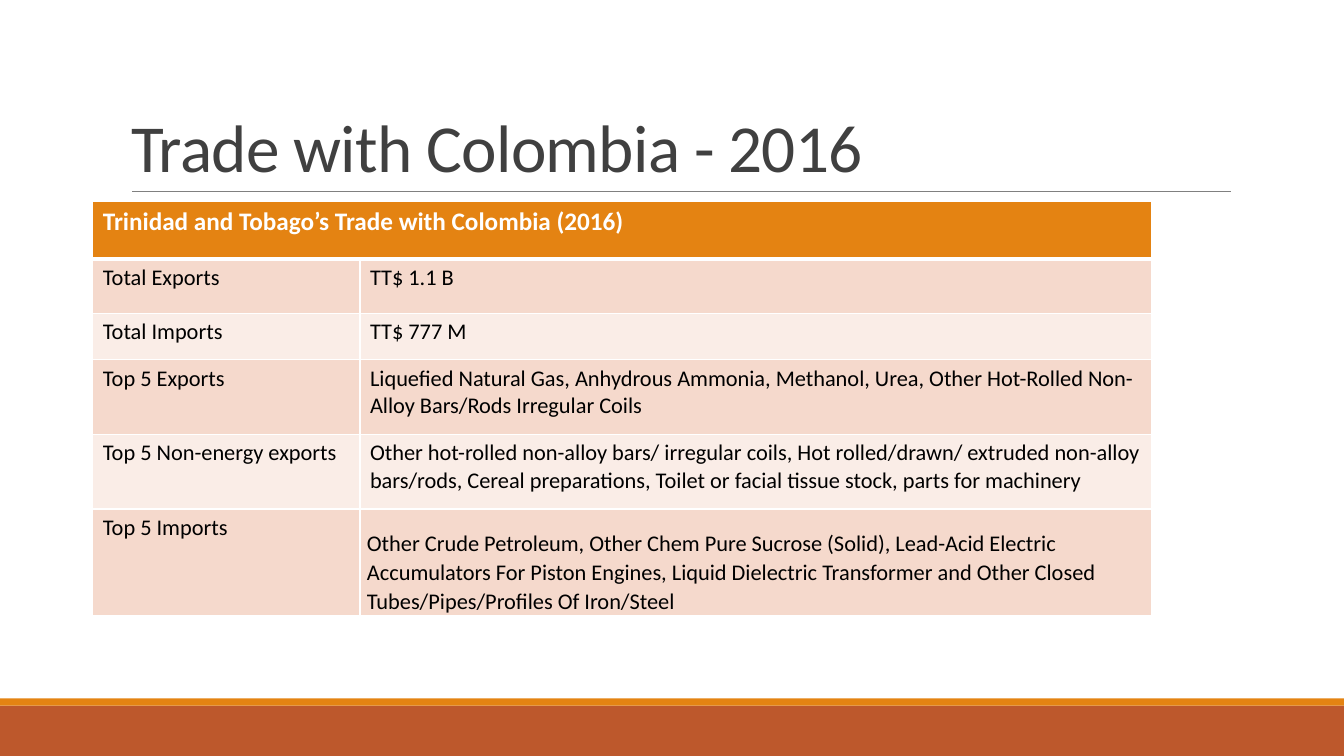
from dataclasses import dataclass

from lxml import etree
from pptx import Presentation
from pptx import util as u
from pptx.dml.color import RGBColor
from pptx.enum import shapes, text
from pptx.oxml import ns

WHITE = RGBColor(0xFF, 0xFF, 0xFF)
BLACK = RGBColor(0, 0, 0)
GRAY = RGBColor(0x80, 0x80, 0x80)
DARK = RGBColor(0x40, 0x40, 0x40)
RUST = RGBColor(0xBD, 0x58, 0x2C)
ORANGE = RGBColor(0xE4, 0x83, 0x12)
PEACH = RGBColor(0xF5, 0xD9, 0xCC)
BLUSH = RGBColor(0xFA, 0xED, 0xE7)
FONT = "Calibri"
WIDE = 13.33


@dataclass
class Band:
    top: float
    height: float
    color: RGBColor


@dataclass
class Row:
    height: float
    label: str
    value: str


BANDS = [Band(7, 0.5, RUST), Band(6.93, 0.07, ORANGE)]
COLS = [2.65, 7.85]
HEAD = Row(0.57, "Trinidad and Tobago’s Trade with Colombia (2016)", "")
ROWS = [
    Row(0.54, "Total Exports", "TT$ 1.1 B"),
    Row(0.46, "Total Imports", "TT$ 777 M"),
    Row(0.74, "Top 5 Exports",
        "Liquefied Natural Gas, Anhydrous Ammonia, Methanol, Urea, "
        "Other Hot-Rolled Non-Alloy Bars/Rods Irregular Coils"),
    Row(0.74, "Top 5 Non-energy exports",
        "Other hot-rolled non-alloy bars/ irregular coils, Hot rolled/drawn/ "
        "extruded non-alloy bars/rods, Cereal preparations, "
        "Toilet or facial tissue stock, parts for machinery"),
    Row(1.06, "Top 5 Imports",
        "Other Crude Petroleum, Other Chem Pure Sucrose (Solid), "
        "Lead-Acid Electric Accumulators For Piston Engines, Liquid Dielectric "
        "Transformer and Other Closed Tubes/Pipes/Profiles Of Iron/Steel"),
]


def draw_band(slide, band: Band) -> None:
    bar = slide.shapes.add_shape(
        shapes.MSO_SHAPE.RECTANGLE, 0, u.Inches(band.top),
        u.Inches(WIDE), u.Inches(band.height))
    bar.shadow.inherit = False
    bar.fill.solid()
    bar.fill.fore_color.rgb = band.color
    bar.line.fill.background()


def draw_rule(slide) -> None:
    rule = slide.shapes.add_connector(
        shapes.MSO_CONNECTOR.STRAIGHT, u.Inches(1.31), u.Inches(1.9),
        u.Inches(12.21), u.Inches(1.9))
    rule.line.color.rgb = GRAY
    rule.line.width = u.Pt(0.5)
    etree.SubElement(rule._element.spPr, ns.qn("a:effectLst"))


def set_title(slide) -> None:
    title = slide.shapes.title
    title.left, title.top = u.Inches(1.2), u.Inches(0.31)
    title.width, title.height = u.Inches(11), u.Inches(1.59)
    frame = title.text_frame
    frame.text = "Trade with Colombia - 2016"
    frame.vertical_anchor = text.MSO_ANCHOR.BOTTOM
    para = frame.paragraphs[0]
    para.alignment = text.PP_ALIGN.LEFT
    para.line_spacing = 0.85
    para.font.name, para.font.size = FONT, u.Pt(48)
    para.font.color.rgb = DARK
    para.runs[0].font._element.set("spc", "-50")


def set_edges(cell, top: float, base: float) -> None:
    props = cell._tc.get_or_add_tcPr()
    sides = {"lnL": 1, "lnR": 1, "lnT": top, "lnB": base}
    for spot, (side, width) in enumerate(sides.items()):
        edge = etree.Element(ns.qn(f"a:{side}"), w=str(u.Pt(width)))
        fill = etree.SubElement(edge, ns.qn("a:solidFill"))
        etree.SubElement(fill, ns.qn("a:srgbClr"), val=str(WHITE))
        props.insert(spot, edge)


def set_cell(cell, words: str, fill: RGBColor, color: RGBColor,
             size: int, bold: bool) -> None:
    cell.text = words
    cell.fill.solid()
    cell.fill.fore_color.rgb = fill
    font = cell.text_frame.paragraphs[0].font
    font.name, font.size, font.bold = FONT, u.Pt(size), bold
    font.color.rgb = color


def draw_table(slide) -> None:
    rows = [HEAD, *ROWS]
    grid = slide.shapes.add_table(
        len(rows), len(COLS), u.Inches(0.92), u.Inches(2),
        u.Inches(sum(COLS)), u.Inches(sum(row.height for row in rows))).table
    for col, width in zip(grid.columns, COLS):
        col.width = u.Inches(width)
    for num, row in enumerate(rows):
        grid.rows[num].height = u.Inches(row.height)
        for cell, words in zip(grid.rows[num].cells, (row.label, row.value)):
            if num == 0:
                set_cell(cell, words, ORANGE, WHITE, 18, True)
            else:
                fill = PEACH if num % 2 else BLUSH
                set_cell(cell, words, fill, BLACK, 16, False)
            set_edges(cell, 3 if num == 1 else 1, 3 if num == 0 else 1)
    grid.cell(0, 0).merge(grid.cell(0, 1))

    last = grid.cell(len(ROWS), 1)
    last.vertical_anchor = text.MSO_ANCHOR.BOTTOM
    last.margin_left = last.margin_right = u.Inches(0.07)
    last.margin_top = last.margin_bottom = 0
    para = last.text_frame.paragraphs[0]
    para.line_spacing = 1.07
    para.space_after = u.Pt(8)


def main() -> None:
    deck = Presentation()
    deck.slide_width, deck.slide_height = u.Inches(WIDE), u.Inches(7.5)
    slide = deck.slides.add_slide(deck.slide_layouts[5])
    for band in BANDS:
        draw_band(slide, band)
    draw_rule(slide)
    set_title(slide)
    draw_table(slide)
    deck.save("out.pptx")


if __name__ == "__main__":
    main()
